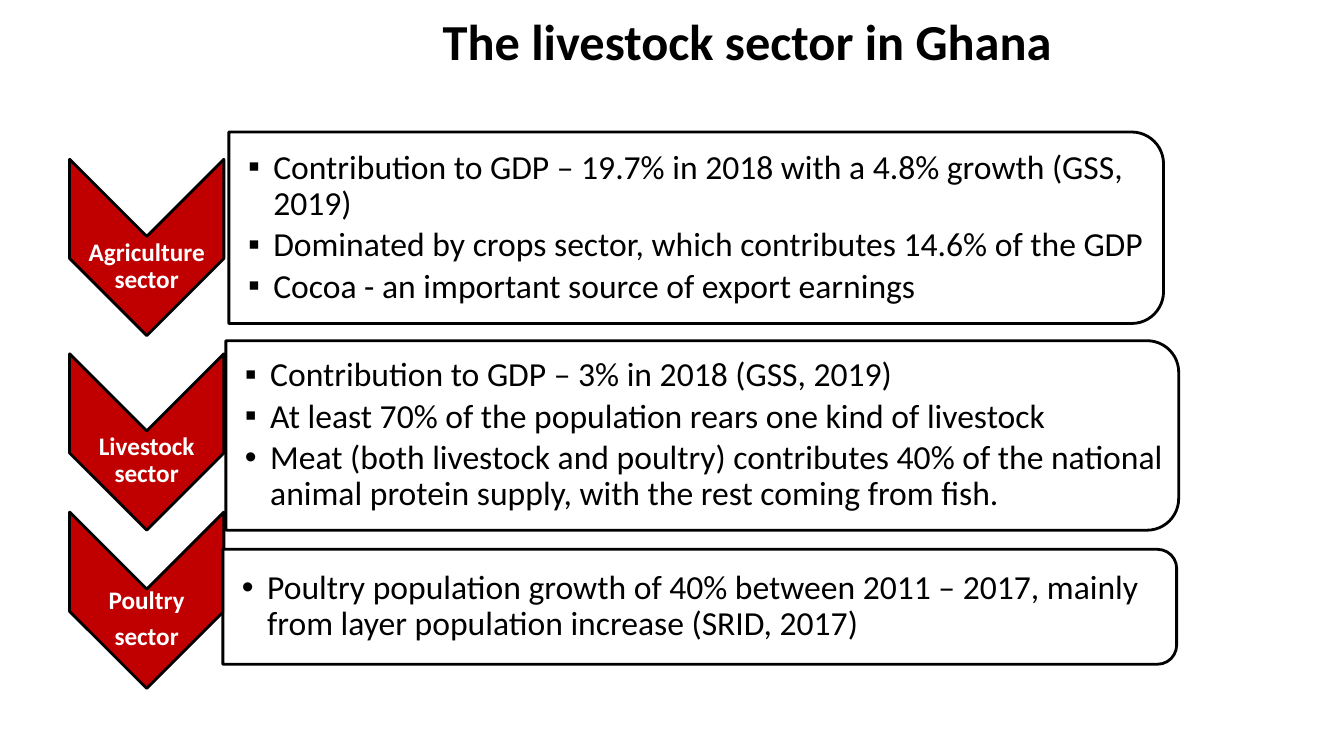
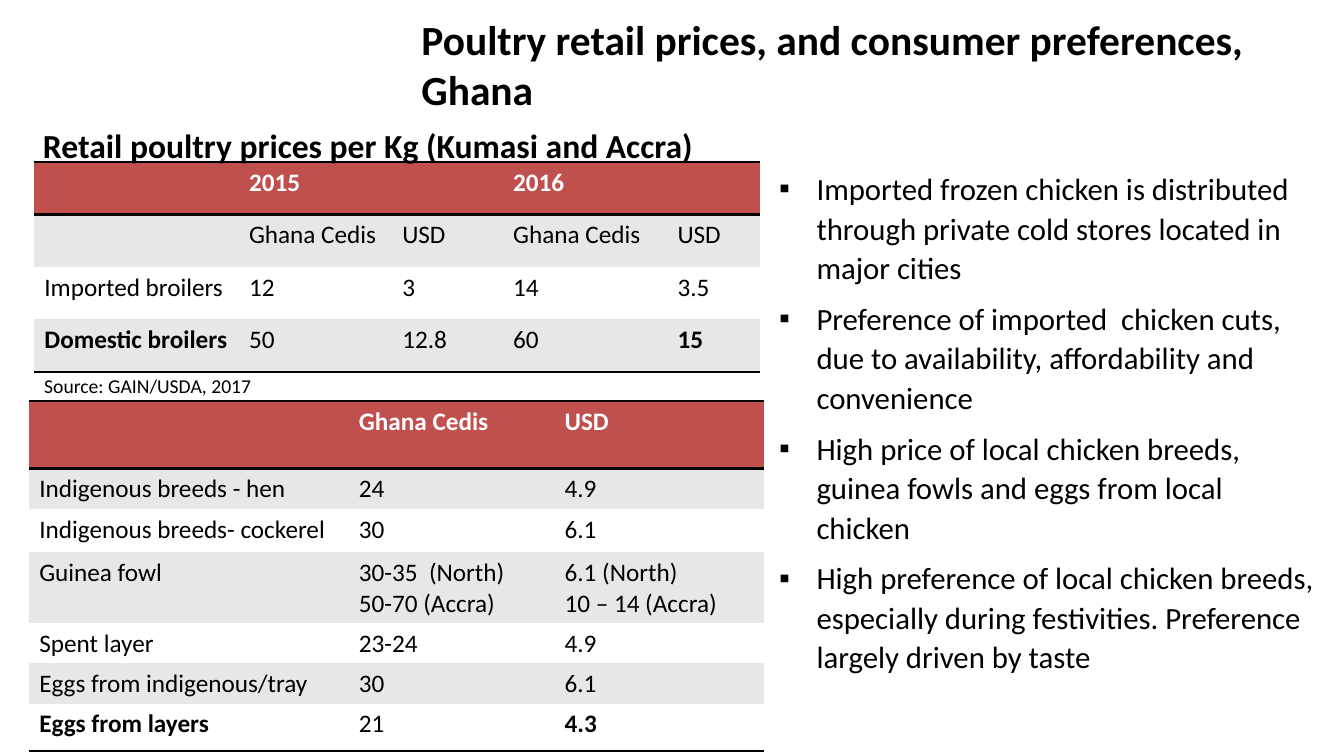
import pptx
import pptx.util
import pptx.dml.color
import pptx.enum.shapes
import pptx.enum.text
import pptx.oxml
import pptx.oxml.ns
from dataclasses import dataclass

Inches, Pt = pptx.util.Inches, pptx.util.Pt
RGB = pptx.dml.color.RGBColor.from_string
SHAPE = pptx.enum.shapes.MSO_SHAPE
ALIGN = pptx.enum.text.PP_ALIGN
ANCHOR = pptx.enum.text.MSO_ANCHOR
qn = pptx.oxml.ns.qn


@dataclass(frozen=True)
class Theme:
    font: str = "Calibri"
    ink: str = "000000"
    paper: str = "FFFFFF"
    chevron: str = "C00000"
    header: str = "C0504D"
    band: str = "E7E7E7"
    title: float = 36
    long_title: float = 29.6
    large: float = 24
    body: float = 22
    label: float = 18
    caption: float = 14
    line: float = 2


T = Theme()
NS = 'xmlns:a="http://schemas.openxmlformats.org/drawingml/2006/main"'
NO_GRID_STYLE = "{2D5ABB26-0587-4C30-8999-92F81FD0307C}"

# Content: slide 1. Each sector has its label lines, chevron top,
# panel box (left, top, width, height) and (bullet, text) pairs.
SECTORS = [
    (["Agriculture sector"], 1.58, (2.27, 1.31, 9.27, 1.9), [
        ("▪", "Contribution to GDP – 19.7% in 2018 with a 4.8% growth (GSS, 2019)"),
        ("▪", "Dominated by crops sector, which contributes 14.6% of the GDP"),
        ("▪", "Cocoa - an important source of export earnings"),
    ]),
    (["Livestock sector"], 3.51, (2.24, 3.38, 9.45, 1.88), [
        ("▪", "Contribution to GDP – 3% in 2018 (GSS, 2019)"),
        ("▪", "At least 70% of the population rears one kind of livestock"),
        ("•", "Meat (both livestock and poultry) contributes 40% of the national "
              "animal protein supply, with the rest coming from fish."),
    ]),
    (["Poultry", "sector"], 5.08, (2.21, 5.45, 9.46, 1.14), [
        ("•", "Poultry population growth of 40% between 2011 – 2017, mainly "
              "from layer population increase (SRID, 2017)"),
    ]),
]
CHEVRON_LEFT, CHEVRON_W, CHEVRON_H = 0.69, 1.53, 1.75

# Content: slide 2
BROILERS = [
    ["", "2015", "", "2016", ""],
    ["", "Ghana Cedis", "USD", "Ghana Cedis", "USD"],
    ["Imported broilers", "12", "3", "14", "3.5"],
    ["Domestic broilers", "50", "12.8", "60", "15"],
]
LOCAL_PRODUCTS = [
    ["", "Ghana Cedis", "USD"],
    ["Indigenous breeds - hen", "24", "4.9"],
    ["Indigenous breeds- cockerel", "30", "6.1"],
    ["Guinea fowl", "30-35  (North)\n50-70 (Accra)", "6.1 (North)\n10 – 14 (Accra)"],
    ["Spent layer", "23-24", "4.9"],
    ["Eggs from indigenous/tray", "30", "6.1"],
    ["Eggs from layers", "21", "4.3"],
]
PREFERENCES = [
    "Imported frozen chicken is distributed through private cold stores located in major cities",
    "Preference of imported  chicken cuts, due to availability, affordability and convenience",
    "High price of local chicken breeds, guinea fowls and eggs from local chicken",
    "High preference of local chicken breeds, especially during festivities. "
    "Preference largely driven by taste",
]


# Shared helpers
def style(p, size, color=T.ink, bold=False):
    for r in p.runs:
        r.font.name, r.font.size, r.font.bold = T.font, Pt(size), bold
        r.font.color.rgb = RGB(color)


def bullet(p, char, indent):
    pPr = p._p.get_or_add_pPr()
    pPr.set("marL", str(Inches(indent)))
    pPr.set("indent", str(-Inches(indent)))
    for xml in ('<a:buFont %s typeface="Arial"/>' % NS,
                '<a:buChar %s char="%s"/>' % (NS, char)):
        pPr.append(pptx.oxml.parse_xml(xml))


def add_text(s, box, lines, size, color=T.ink, bold=False, align=ALIGN.LEFT,
             anchor=ANCHOR.TOP, insets=None, spacing=1.0, gap=0,
             bullets=None, indent=0.25, wrap=True):
    tf = s.shapes.add_textbox(*map(Inches, box)).text_frame
    tf.word_wrap, tf.vertical_anchor = wrap, anchor
    if insets:
        (tf.margin_left, tf.margin_top,
         tf.margin_right, tf.margin_bottom) = map(Inches, insets)
    tf.text = "\n".join(lines)
    for i, p in enumerate(tf.paragraphs):
        if bullets:
            bullet(p, bullets[i], indent)
        p.alignment, p.line_spacing = align, spacing
        if i:
            p.space_before = Pt(gap)
        style(p, size, color, bold)


def add_slide(prs, title, box, size):
    s = prs.slides.add_slide(prs.slide_layouts[5])
    sp = s.shapes.title
    sp.left, sp.top, sp.width, sp.height = map(Inches, box)
    tf = sp.text_frame
    tf.text = title
    tf.auto_size = pptx.enum.text.MSO_AUTO_SIZE.NONE
    tf.vertical_anchor = ANCHOR.TOP
    tf.paragraphs[0].alignment = ALIGN.LEFT
    style(tf.paragraphs[0], size, bold=True)
    return s


def add_turned(s, kind, box, fill, opacity=None):
    """Add a shape turned by 90 degrees that covers the given box."""
    x, y, w, h = box
    shift = (w - h) / 2
    sp = s.shapes.add_shape(kind, *map(Inches, (x + shift, y - shift, h, w)))
    sp.rotation = 90
    sp.shadow.inherit = False
    sp.fill.solid()
    sp.fill.fore_color.rgb = RGB(fill)
    sp.line.color.rgb = RGB(T.ink)
    sp.line.width = Pt(T.line)
    if opacity:
        clr = sp._element.spPr.find(qn("a:solidFill"))[0]
        clr.append(pptx.oxml.parse_xml(
            '<a:alpha %s val="%d"/>' % (NS, opacity * 1000)))


def add_border(tcPr, side):
    tcPr.append(pptx.oxml.parse_xml(
        '<a:ln%s %s w="%d"><a:solidFill><a:srgbClr val="%s"/></a:solidFill></a:ln%s>'
        % (side, NS, Pt(T.line), T.ink, side)))


def add_price_table(s, left, top, cols, rows, data, merges=()):
    """Red header, grey and white bands, rules round the header and at the foot."""
    tbl = s.shapes.add_table(len(rows), len(cols), *map(
        Inches, (left, top, sum(cols), sum(rows)))).table
    tbl._tbl.tblPr.find(qn("a:tableStyleId")).text = NO_GRID_STYLE
    for c, w in enumerate(cols):
        tbl.columns[c].width = Inches(w)
    last_row, last_col = len(rows) - 1, len(cols) - 1
    for r, h in enumerate(rows):
        tbl.rows[r].height = Inches(h)
        head, foot = r == 0, r == last_row
        for c, text in enumerate(data[r]):
            cell = tbl.cell(r, c)
            tcPr = cell._tc.get_or_add_tcPr()
            if head:
                add_border(tcPr, "T")
            if head or foot:
                add_border(tcPr, "B")
            cell.fill.solid()
            cell.fill.fore_color.rgb = RGB(
                T.header if head else T.band if r % 2 else T.paper)
            cell.text_frame.text = text
            for p in cell.text_frame.paragraphs:
                style(p, T.label, T.paper if head else T.ink,
                      head or (foot and c in (0, last_col)))
    for first, last in merges:
        tbl.cell(0, first).merge(tbl.cell(0, last))


# Slides
def build_sectors(prs):
    s = add_slide(prs, "The livestock sector in Ghana", (4.29, 0.05, 7.6, 0.97), T.title)
    for label, top, panel, points in SECTORS:
        add_turned(s, SHAPE.CHEVRON, (CHEVRON_LEFT, top, CHEVRON_W, CHEVRON_H), T.chevron)
        # The label sits just below the middle of its chevron
        add_text(s, (CHEVRON_LEFT, top + CHEVRON_H / 2 - 0.16, CHEVRON_W, 0.7), label,
                 T.label, T.paper, True, ALIGN.CENTER, ANCHOR.MIDDLE,
                 (0.01,) * 4, 0.9, 6.3)
        add_turned(s, SHAPE.ROUND_2_SAME_RECTANGLE, panel, T.paper, opacity=90)
        x, y, w, h = panel
        marks, lines = zip(*points)
        add_text(s, (x, y + 0.09, w - 0.09, h - 0.18), lines, T.large,
                 anchor=ANCHOR.MIDDLE, insets=(0.19, 0.02, 0.02, 0.02),
                 spacing=0.9, gap=3.6, bullets=marks)


def build_prices(prs):
    s = add_slide(prs, "Poultry retail prices, and consumer preferences, Ghana",
                  (4.08, 0.09, 9.13, 0.94), T.long_title)
    add_price_table(s, 0.34, 1.61, [2.03, 1.52, 1.1, 1.63, 0.92], [0.52] * 4,
                    BROILERS, merges=[(1, 2), (3, 4)])
    add_text(s, (0.24, 1.1, 6.82, 0.67),
             ["Retail poultry prices per Kg (Kumasi and Accra)"], T.large,
             bold=True, align=ALIGN.CENTER, anchor=ANCHOR.MIDDLE)
    add_text(s, (0.34, 3.66, 2.27, 0.34), ["Source: GAIN/USDA, 2017"],
             T.caption, wrap=False)
    add_text(s, (7.63, 1.61, 5.58, 5.67), PREFERENCES, T.body, spacing=1.07,
             gap=8, bullets="▪" * len(PREFERENCES), indent=0.37)
    add_price_table(s, 0.29, 3.98, [3.17, 2.04, 2.08],
                    [0.67, 0.38, 0.43, 0.67, 0.38, 0.38, 0.47], LOCAL_PRODUCTS)


def main():
    prs = pptx.Presentation()
    prs.slide_width, prs.slide_height = Inches(13.33), Inches(7.5)
    build_sectors(prs)
    build_prices(prs)
    prs.save("out.pptx")


if __name__ == "__main__":
    main()
